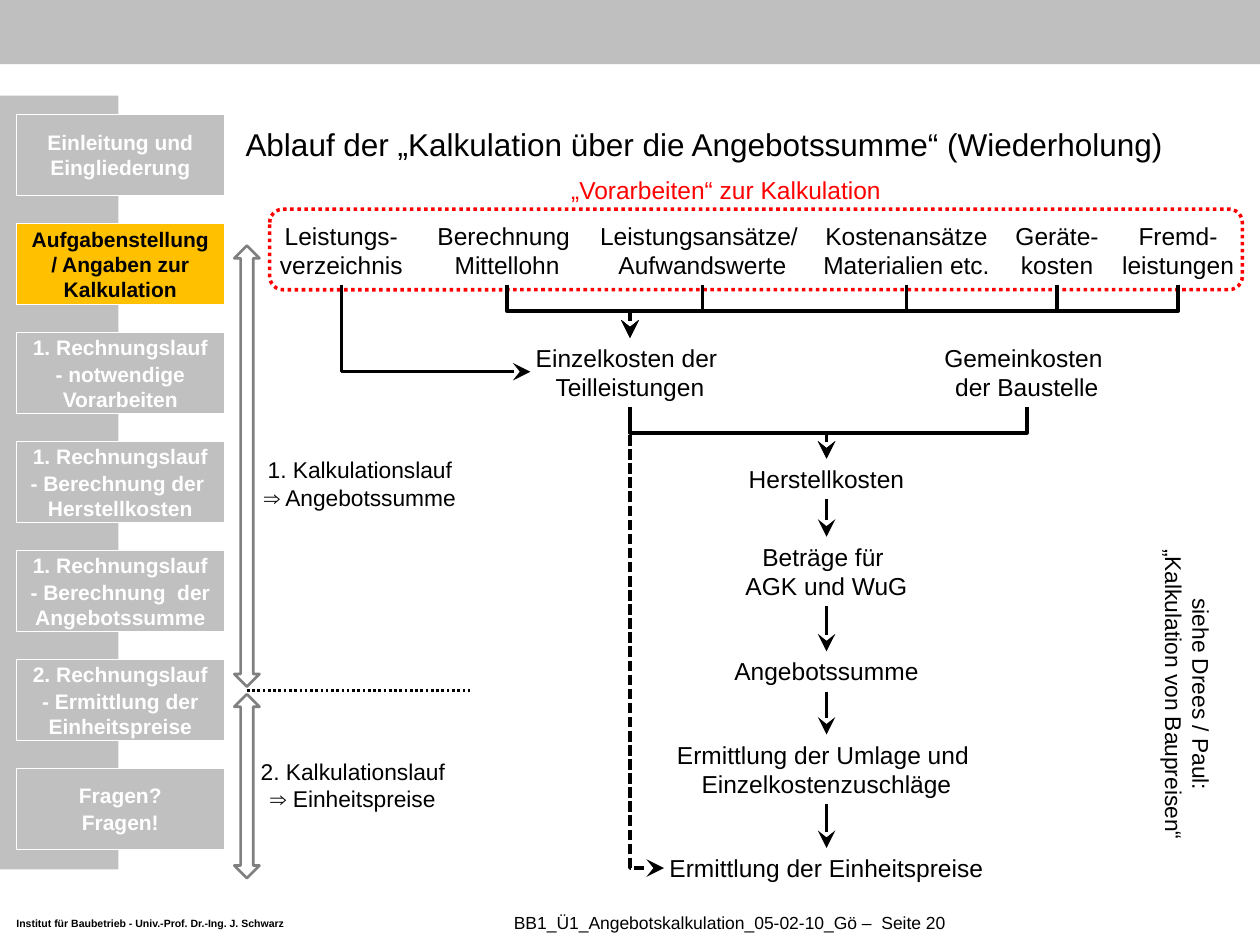
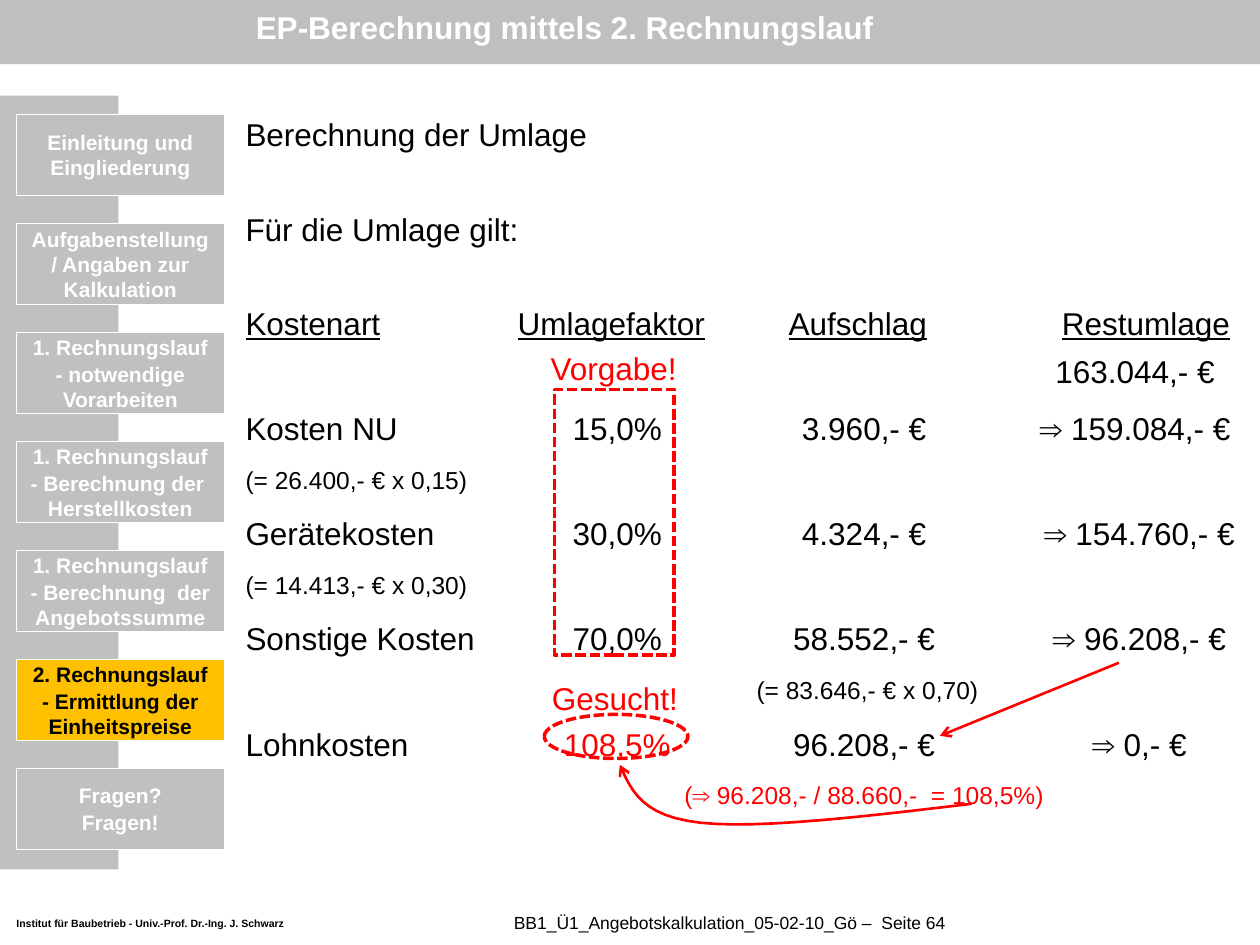
import lxml.etree
import pptx
import pptx.dml.color
import pptx.enum.dml
import pptx.enum.shapes
import pptx.enum.text
import pptx.oxml.ns
import pptx.util

Inches = pptx.util.Inches
Pt = pptx.util.Pt
qn = pptx.oxml.ns.qn
SHAPE = pptx.enum.shapes.MSO_SHAPE
CONNECTOR = pptx.enum.shapes.MSO_CONNECTOR
DASH = pptx.enum.dml.MSO_LINE
ALIGN = pptx.enum.text.PP_ALIGN
ANCHOR = pptx.enum.text.MSO_ANCHOR

BLACK = pptx.dml.color.RGBColor(0x00, 0x00, 0x00)
WHITE = pptx.dml.color.RGBColor(0xFF, 0xFF, 0xFF)
RED = pptx.dml.color.RGBColor(0xFF, 0x00, 0x00)
AMBER = pptx.dml.color.RGBColor(0xFF, 0xC0, 0x00)
BAND_GREY = pptx.dml.color.RGBColor(0xBF, 0xBF, 0xBF)
NAV_GREY = pptx.dml.color.RGBColor(0xC0, 0xC0, 0xC0)
ARROW_GREY = pptx.dml.color.RGBColor(0x80, 0x80, 0x80)
FONT = "Arial"


def add_box(s, at, lines=(), size=14, color=BLACK, bold=False, align=ALIGN.CENTER,
            anchor=ANCHOR.TOP, inset=(0.04, 0.04), wrap=False, before=0,
            preset=None, fill=None, line=None, width=0.75, dash=None):
    """Add a text box, or a preset shape if one is given, with its text."""
    at = [Inches(v) for v in at]
    if preset is None:
        sp = s.shapes.add_textbox(*at)
    else:
        sp = s.shapes.add_shape(preset, *at)
        sp.shadow.inherit = False
        if fill is None:
            sp.fill.background()
        else:
            sp.fill.solid()
            sp.fill.fore_color.rgb = fill
        if line is None:
            sp.line.fill.background()
        else:
            sp.line.color.rgb = line
            sp.line.width = Pt(width)
            if dash:
                sp.line.dash_style = dash
    tf = sp.text_frame
    tf.word_wrap = wrap
    tf.vertical_anchor = anchor
    tf.margin_left = tf.margin_right = Inches(inset[0])
    tf.margin_top = tf.margin_bottom = Inches(inset[1])
    for i, text in enumerate(lines):
        p = tf.add_paragraph() if i else tf.paragraphs[0]
        p.alignment = align
        if i and before:
            p.space_before = Pt(before)
        r = p.add_run()
        r.text = text
        r.font.name, r.font.size = FONT, Pt(size)
        r.font.bold, r.font.color.rgb = bold, color
    return sp


def style_line(ln_shape, color=BLACK, width=2, dash=None, head="stealth", head_size="lg"):
    """Style a connector or an open outline, with an arrowhead at its end."""
    line = ln_shape.line
    line.color.rgb = color
    line.width = Pt(width)
    if dash:
        line.dash_style = dash
    spPr = ln_shape._element.spPr
    if head:
        lxml.etree.SubElement(spPr.find(qn("a:ln")), qn("a:tailEnd"),
                              type=head, w=head_size, len=head_size)
    if spPr.find(qn("a:effectLst")) is None:
        lxml.etree.SubElement(spPr, qn("a:effectLst"))


prs = pptx.Presentation()
prs.slide_width = Inches(10)
prs.slide_height = Inches(7.5)

# Shared frame: bands, footers and navigation with the active step marked
NAV_STEPS = [
    ["Einleitung und Eingliederung"],
    ["Aufgabenstellung / Angaben zur Kalkulation"],
    ["1. Rechnungslauf", "- notwendige Vorarbeiten"],
    ["1. Rechnungslauf", "- Berechnung der  Herstellkosten"],
    ["1. Rechnungslauf", "- Berechnung  der Angebotssumme"],
    ["2. Rechnungslauf", "- Ermittlung der Einheitspreise"],
    ["Fragen?", "Fragen!"],
]
NAV_TOP, NAV_PITCH = 0.91, 0.865
slides = []
for page, active in ((20, 1), (64, 5)):
    s = prs.slides.add_slide(prs.slide_layouts[6])
    slides.append(s)
    add_box(s, (0, 0, 10, 0.51), preset=SHAPE.RECTANGLE, fill=BAND_GREY)
    add_box(s, (0, 0.76, 0.94, 6.14), preset=SHAPE.RECTANGLE, fill=NAV_GREY)
    add_box(s, (0.13, 7.28, 2.15, 0.1),
            ["Institut für Baubetrieb - Univ.-Prof. Dr.-Ing. J. Schwarz"], size=6,
            bold=True, align=ALIGN.LEFT, anchor=ANCHOR.MIDDLE, inset=(0, 0))
    add_box(s, (2.76, 7.17, 6.06, 0.31),
            [f"BB1_Ü1_Angebotskalkulation_05-02-10_Gö –  Seite {page}"], size=10,
            anchor=ANCHOR.MIDDLE, inset=(0.1, 0), wrap=True)
    for i, step in enumerate(NAV_STEPS):
        add_box(s, (0.13, NAV_TOP + i * NAV_PITCH, 1.65, 0.64), step, size=12, bold=True,
                color=BLACK if i == active else WHITE, anchor=ANCHOR.MIDDLE,
                inset=(0.1, 0.05), wrap=True, before=1, preset=SHAPE.RECTANGLE,
                fill=AMBER if i == active else NAV_GREY, line=WHITE)

# Slide 1: title
s = slides[0]
sp = add_box(s, (1.85, 0.79, 7.91, 1.01),
             ["Ablauf der „Kalkulation über die Angebotssumme“ (Wiederholung)"],
             size=18, align=ALIGN.LEFT, inset=(0.1, 0.05), wrap=True)
sp.text_frame.paragraphs[0].line_spacing = 1.5

# Preparatory inputs in the dotted frame
inputs = [
    (2.18, 1.06, ["Leistungs-", "verzeichnis"]),
    (3.43, 1.19, ["Berechnung ", "Mittellohn"]),
    (4.72, 1.71, ["Leistungsansätze/ ", "Aufwandswerte"]),
    (6.49, 1.41, ["Kostenansätze", "Materialien etc."]),
    (7.96, 0.86, ["Geräte-", "kosten"]),
    (8.86, 0.98, ["Fremd-", "leistungen"]),
]
for left, width, lines in inputs:
    add_box(s, (left, 1.71, width, 0.55), lines)
add_box(s, (4.49, 1.35, 2.6, 0.32), ["„Vorarbeiten“ zur Kalkulation "], color=RED)
add_box(s, (2.14, 1.66, 7.72, 0.64), preset=SHAPE.ROUNDED_RECTANGLE,
        line=RED, width=2, dash=DASH.ROUND_DOT)

# Cost blocks and the calculation chain below them
add_box(s, (4.21, 2.68, 1.58, 0.55), ["Einzelkosten der ", "Teilleistungen"])
add_box(s, (7.45, 2.68, 1.4, 0.55), ["Gemeinkosten ", "der Baustelle"])
CHAIN_X = 6.56
chain = [
    (3.64, 1.4, ["Herstellkosten"]),
    (4.26, 1.4, ["Beträge für ", "AGK und WuG"]),
    (5.17, 1.7, ["Angebotssumme"]),
    (5.83, 2.5, ["Ermittlung der Umlage und ", "Einzelkostenzuschläge"]),
    (6.73, 2.6, ["Ermittlung der Einheitspreise"]),
]
previous = None
for top, width, lines in chain:
    height = 0.55 if len(lines) == 2 else 0.32
    sp = add_box(s, (CHAIN_X - width / 2, top, width, height), lines)
    if previous is not None:
        c = s.shapes.add_connector(CONNECTOR.STRAIGHT, 0, 0, 0, 0)
        c.begin_connect(previous, 2)
        c.end_connect(sp, 0)
        style_line(c)
    previous = sp

# Elbows that start downwards: start, end, preset, dash
centers = [left + width / 2 for left, width, lines in inputs]
elbows = [(centers[0], 2.26, 4.21, 2.95, "bentConnector2", None)]
elbows += [(x, 2.26, 5, 2.68, "bentConnector3", None) for x in centers[1:]]
elbows += [(x, 3.23, CHAIN_X, 3.64, "bentConnector3", None) for x in (5, 8.15)]
elbows += [(5, 3.23, 5.27, 6.89, "bentConnector2", DASH.SQUARE_DOT)]
for x1, y1, x2, y2, preset, dash in elbows:
    cx, cy = (x1 + x2) / 2, (y1 + y2) / 2
    half_w, half_h = (y2 - y1) / 2, abs(x2 - x1) / 2
    c = s.shapes.add_connector(CONNECTOR.ELBOW, Inches(cx - half_w), Inches(cy - half_h),
                               Inches(cx + half_w), Inches(cy + half_h))
    spPr = c._element.spPr
    spPr.find(qn("a:prstGeom")).set("prst", preset)
    xfrm = spPr.find(qn("a:xfrm"))
    xfrm.set("rot", str((270 if x2 > x1 else 90) * 60000))
    if x2 > x1:
        xfrm.set("flipH", "1")
    style_line(c, dash=dash)

# Calculation runs along the double arrows
for top, height in ((1.95, 3.5), (5.51, 1.46)):
    add_box(s, (1.86, top, 0.2, height), preset=SHAPE.UP_DOWN_ARROW,
            line=ARROW_GREY, width=1.5)
c = s.shapes.add_connector(CONNECTOR.STRAIGHT, Inches(1.96), Inches(5.48),
                           Inches(3.73), Inches(5.48))
style_line(c, width=1.5, dash=DASH.ROUND_DOT, head=None)
add_box(s, (2.02, 3.58, 1.67, 0.52), ["1. Kalkulationslauf", "⇒ Angebotssumme"], size=13)
add_box(s, (2.02, 5.97, 1.56, 0.52), ["2. Kalkulationslauf", "⇒ Einheitspreise"], size=13)
sp = add_box(s, (8.22, 5.25, 2.41, 0.52),
             ["siehe Drees / Paul:", "„Kalkulation von Baupreisen“"], size=13)
sp.rotation = 90

# Slide 2: title in the top band
s = slides[1]
add_box(s, (2.01, 0.04, 7.95, 0.34), ["EP-Berechnung mittels 2. Rechnungslauf"], size=18,
        color=WHITE, bold=True, align=ALIGN.LEFT, anchor=ANCHOR.MIDDLE,
        inset=(0.02, 0.02), wrap=True)

# Allocation columns on tab stops: space before, tabs, runs (text, size, colour)
HEAD_TABS = [(2.16, "l"), (4.31, "l"), (6.48, "l")]
ROW_TABS = [(2.95, "ctr"), (4.91, "ctr"), (7.06, "ctr")]
rows = [
    (0, [], [("Berechnung der Umlage", 18, BLACK)]),
    (27, [], [("Für die Umlage gilt:", 18, BLACK)]),
    (27, HEAD_TABS, [("Kostenart", 18, BLACK), ("\t", 18, BLACK),
                     ("Umlagefaktor", 18, BLACK), ("\t", 18, BLACK),
                     ("Aufschlag", 18, BLACK), ("\t", 18, BLACK),
                     ("Restumlage", 18, BLACK)]),
    (0, ROW_TABS, [("\t\t\t163.044,- €", 18, BLACK)]),
    (6, ROW_TABS, [("Kosten NU\t15,0%\t3.960,- €\t⇒ 159.084,- €", 18, BLACK)]),
    (0, ROW_TABS, [("(= 26.400,- € x 0,15)", 14, BLACK)]),
    (6, ROW_TABS, [("Gerätekosten\t30,0%\t4.324,- €\t ⇒ 154.760,- €", 18, BLACK)]),
    (0, ROW_TABS, [("(= 14.413,- € x 0,30)", 14, BLACK)]),
    (6, ROW_TABS, [("Sonstige Kosten\t70,0%\t58.552,- €\t ⇒ 96.208,- €", 18, BLACK)]),
    (0, ROW_TABS, [("\t\t (= 83.646,- € x 0,70)", 14, BLACK)]),
    (6, ROW_TABS, [("Lohnkosten \t", 18, BLACK), ("108,5%", 18, RED),
                   ("\t96.208,- €\t ⇒ 0,- €", 18, BLACK)]),
    (0, ROW_TABS, [("\t\t(⇒ 96.208,- / 88.660,-  = 108,5%)", 14, RED)]),
]
sp = add_box(s, (1.85, 0.79, 8.11, 5.74), inset=(0.1, 0.05), wrap=True)
tf = sp.text_frame
tf.margin_right = 0
for i, (before, tabs, runs) in enumerate(rows):
    p = tf.add_paragraph() if i else tf.paragraphs[0]
    if tabs:
        tab_list = lxml.etree.SubElement(p._p.get_or_add_pPr(), qn("a:tabLst"))
        for pos, algn in tabs:
            lxml.etree.SubElement(tab_list, qn("a:tab"), pos=str(Inches(pos)), algn=algn)
    p.line_spacing = Pt(27)
    if before:
        p.space_before = Pt(before)
    for text, size, color in runs:
        r = p.add_run()
        r.text = text
        r.font.name, r.font.size, r.font.color.rgb = FONT, Pt(size), color
        r.font.underline = tabs is HEAD_TABS and text != "\t"

# Red marks: given factors and wanted factor
add_box(s, (4.4, 3.09, 0.95, 2.11), preset=SHAPE.RECTANGLE,
        line=RED, width=2, dash=DASH.SQUARE_DOT)
add_box(s, (4.32, 5.67, 1.14, 0.35), preset=SHAPE.OVAL,
        line=RED, width=2, dash=DASH.SQUARE_DOT)
for left, top, label in ((4.33, 2.73, "Vorgabe!"), (4.34, 5.35, "Gesucht!")):
    add_box(s, (left, top, 1.09, 0.38), [label], size=18, color=RED,
            align=ALIGN.LEFT, anchor=ANCHOR.MIDDLE)

# Red arrows: remainder to surcharge, and curve to the wanted factor
c = s.shapes.add_connector(CONNECTOR.STRAIGHT, Inches(8.88), Inches(5.26),
                           Inches(7.46), Inches(5.84))
style_line(c, color=RED, width=1.5, head="arrow", head_size="med")
curves = [
    ((7.71, 6.38), (6.87, 6.48), (6.03, 6.58), (5.56, 6.53)),
    ((5.56, 6.53), (5.1, 6.48), (5.01, 6.28), (4.92, 6.07)),
]
STEPS = 12
points = []
for curve in curves:
    for k in range(1, STEPS + 1):
        t = k / STEPS
        weights = ((1 - t) ** 3, 3 * t * (1 - t) ** 2, 3 * t ** 2 * (1 - t), t ** 3)
        points.append([Inches(sum(w * pt[axis] for w, pt in zip(weights, curve)))
                       for axis in (0, 1)])
start_x, start_y = curves[0][0]
builder = s.shapes.build_freeform(Inches(start_x), Inches(start_y))
builder.add_line_segments(points, close=False)
sp = builder.convert_to_shape()
sp.shadow.inherit = False
sp.fill.background()
style_line(sp, color=RED, width=1.5, head="arrow", head_size="med")

prs.save("out.pptx")
